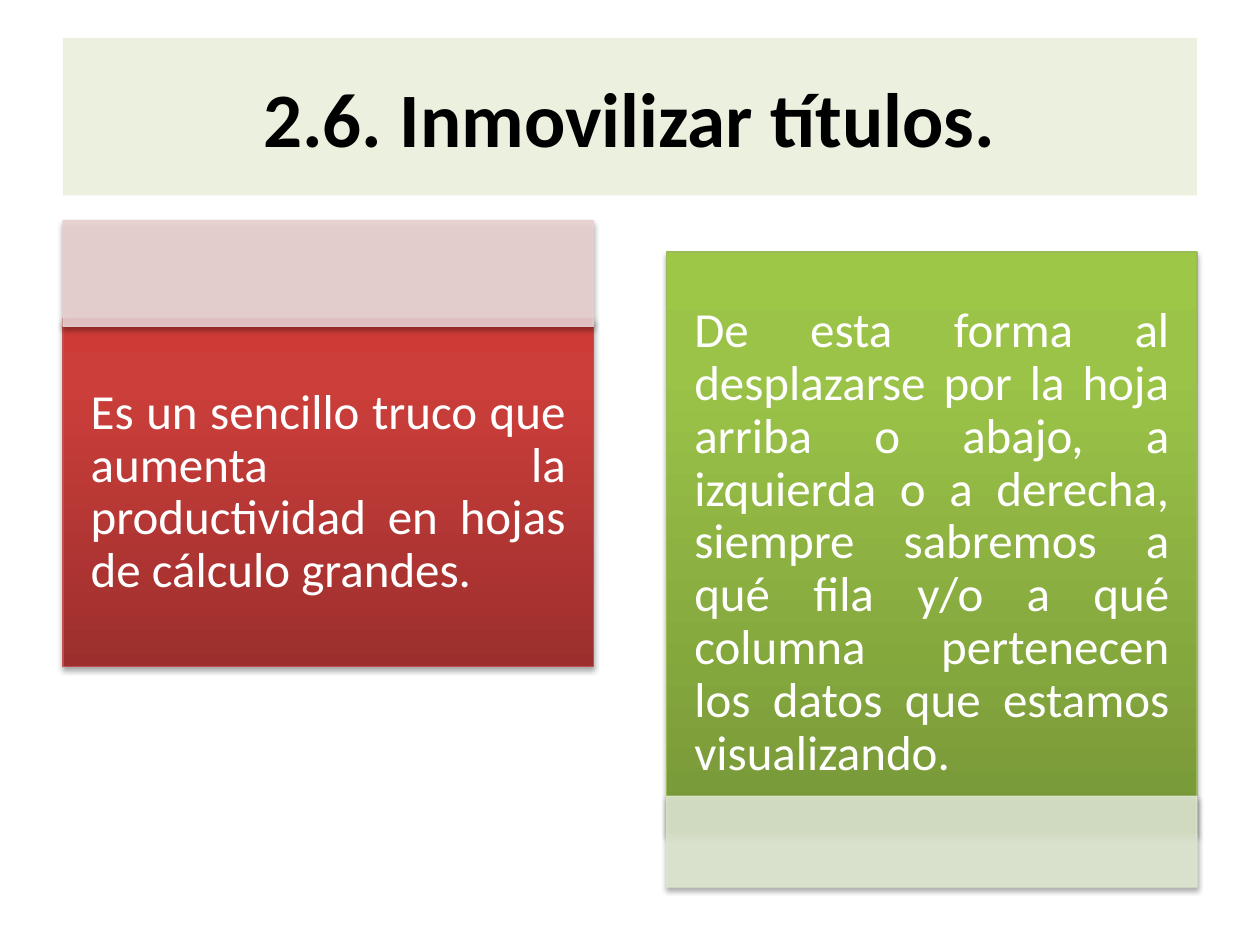
import pptx
import pptx.util
import pptx.dml.color
import pptx.enum.shapes
import pptx.enum.text
import pptx.oxml.ns
from lxml import etree

Inches, Pt = pptx.util.Inches, pptx.util.Pt
RGB = pptx.dml.color.RGBColor.from_string
ALIGN = pptx.enum.text.PP_ALIGN
qn = pptx.oxml.ns.qn

COLORS = {"title": "EBF1DE", "ink": "000000", "white": "FFFFFF"}
WIDTH = 4.21

# Each card: left, body top and height, strip top and height, colours, text
CARDS = [
    dict(left=0.5, body=(2.53, 2.76), strip=(1.75, 0.84),
         stops=["9C2F2D", "CB3E3A", "CE3B37"], line="C0504D", pale="E8D0D0",
         text="Es un sencillo truco que aumenta la productividad en hojas "
              "de cálculo grandes."),
    dict(left=5.29, body=(2, 4.62), strip=(6.32, 0.72),
         stops=["779737", "9BC348", "9DC746"], line="9BBB59", pale="DEE7D1",
         text="De esta forma al desplazarse por la hoja arriba o abajo, a "
              "izquierda o a derecha, siempre sabremos a qué fila y/o a qué "
              "columna pertenecen los datos que estamos visualizando."),
]

prs = pptx.Presentation()
prs.slide_width, prs.slide_height = Inches(10), Inches(7.5)
slide = prs.slides.add_slide(prs.slide_layouts[6])


def add_box(left, top, width, height):
    box = slide.shapes.add_shape(pptx.enum.shapes.MSO_SHAPE.RECTANGLE,
                                 Inches(left), Inches(top),
                                 Inches(width), Inches(height))
    box.shadow.inherit = False
    return box


def write(box, text, size, color, align):
    frame = box.text_frame
    frame.word_wrap = True
    frame.vertical_anchor = pptx.enum.text.MSO_ANCHOR.MIDDLE
    para = frame.paragraphs[0]
    para.text = text
    para.alignment = align
    para.font.name = "Calibri"
    para.font.size = Pt(size)
    para.font.color.rgb = RGB(color)
    return para


title = add_box(0.5, 0.3, 9, 1.25)
title.fill.solid()
title.fill.fore_color.rgb = RGB(COLORS["title"])
title.line.fill.background()
head = write(title, "2.6. Inmovilizar títulos.", 44, COLORS["ink"], ALIGN.CENTER)
head.font.bold = True

for card in CARDS:
    body = add_box(card["left"], card["body"][0], WIDTH, card["body"][1])
    body.fill.gradient()
    body.fill.gradient_angle = 90
    stops = body._element.spPr.find(".//" + qn("a:gsLst"))
    for old in list(stops):
        stops.remove(old)
    for pos, color in zip((0, 80, 100), card["stops"]):
        stop = etree.SubElement(stops, qn("a:gs"), pos=str(pos * 1000))
        etree.SubElement(stop, qn("a:srgbClr"), val=color)
    body.line.color.rgb = RGB(card["line"])

    frame = body.text_frame
    frame.margin_left = frame.margin_right = Inches(0.22)
    frame.margin_top = frame.margin_bottom = Inches(0.12)
    para = write(body, card["text"], 28, COLORS["white"], ALIGN.JUSTIFY)
    para.line_spacing = 0.9

    strip = add_box(card["left"], card["strip"][0], WIDTH, card["strip"][1])
    strip.fill.solid()
    strip.fill.fore_color.rgb = RGB(card["pale"])
    strip.line.color.rgb = RGB(card["pale"])
    for tint in strip._element.spPr.iter(qn("a:srgbClr")):
        etree.SubElement(tint, qn("a:alpha"), val="90000")

    for box in (body, strip):
        box.line.width = Pt(0.75)
        effects = box._element.spPr.find(qn("a:effectLst"))
        shade = etree.SubElement(effects, qn("a:outerShdw"),
                                 blurRad=str(Pt(3.1)), dist=str(Pt(1.8)),
                                 dir="5400000", rotWithShape="0")
        tint = etree.SubElement(shade, qn("a:srgbClr"), val=COLORS["ink"])
        etree.SubElement(tint, qn("a:alpha"), val="35000")

prs.save("out.pptx")
